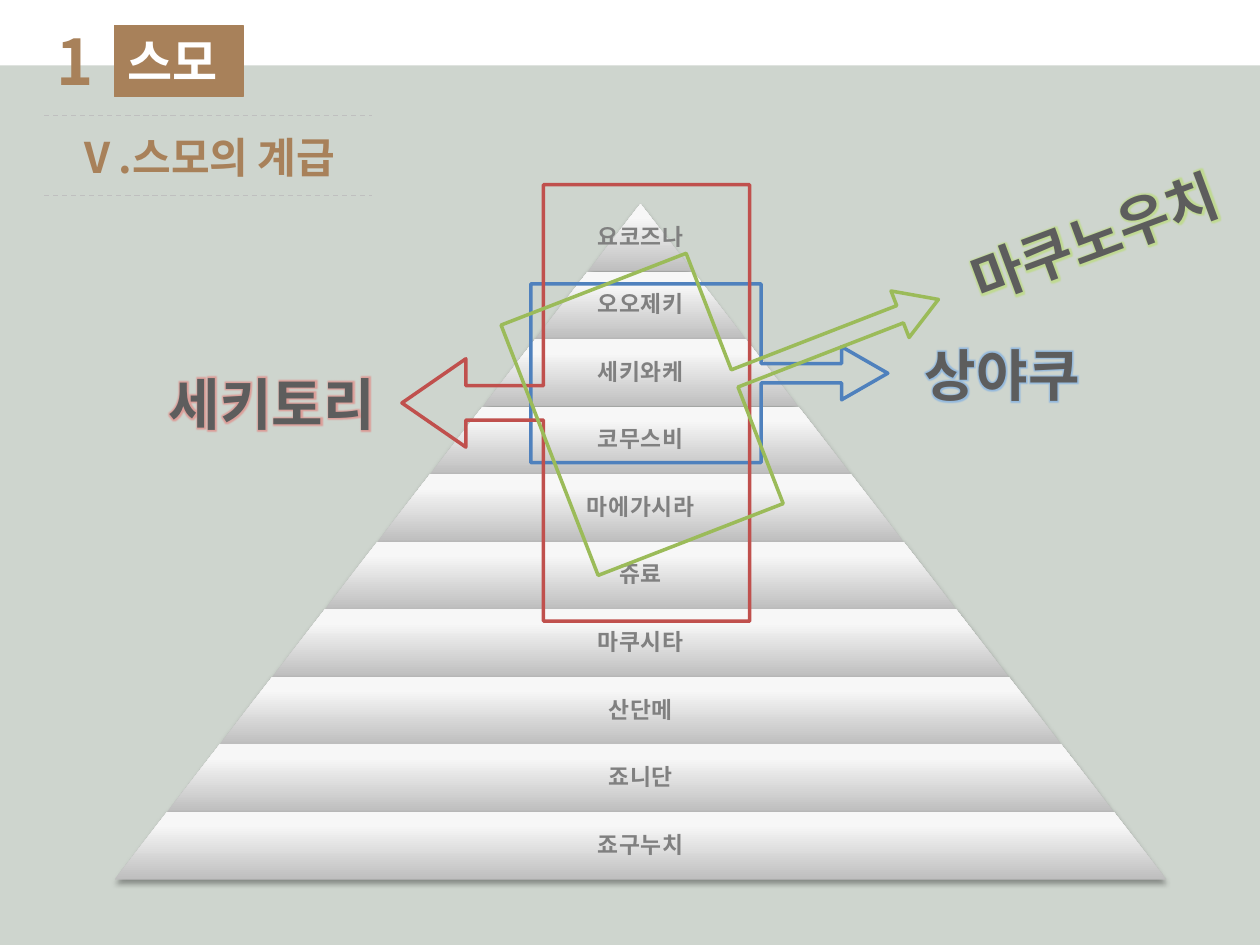
from copy import deepcopy

from lxml import etree
from pptx import Presentation
from pptx.dml.color import RGBColor
from pptx.enum import dml, shapes, text
from pptx.oxml import ns
from pptx.util import Pt

FONT = "Noto Sans CJK KR"
WHITE = RGBColor(0xFF, 0xFF, 0xFF)
SAGE = RGBColor(0xCE, 0xD5, 0xCE)
BROWN = RGBColor(0xA8, 0x81, 0x5A)
RULE = RGBColor(0xBF, 0xBF, 0xBF)
GRAY = RGBColor(0x80, 0x80, 0x80)
CHARCOAL = RGBColor(0x5D, 0x5D, 0x5D)
BLUE = RGBColor(0x4F, 0x81, 0xBD)
RED = RGBColor(0xC0, 0x50, 0x4D)
GREEN = RGBColor(0x9B, 0xBB, 0x59)
RED_GLOW = RGBColor(0xE5, 0x7A, 0x76)
BLUE_GLOW = RGBColor(0x6F, 0xA8, 0xE8)
GREEN_GLOW = RGBColor(0xB8, 0xDE, 0x6C)
BAND_STOPS = [
    (0, RGBColor(0xBE, 0xBE, 0xBE)),
    (0.8, RGBColor(0xF7, 0xF7, 0xF7)),
    (1, RGBColor(0xF8, 0xF8, 0xF8)),
]
RANKS = ["요코즈나", "오오제키", "세키와케", "코무스비", "마에가시라",
         "쥬료", "마쿠시타", "산단메", "죠니단", "죠구누치"]
CENTER, TOP, STEP, BAND_H = 366, 116.6, 60.1, 38.6
ARROWS = shapes.MSO_SHAPE
CALLOUTS = [
    dict(kind=ARROWS.RIGHT_ARROW_CALLOUT, box=(303.3, 162.2, 204, 102.2),
         adj=(0.109, 0.148, 0.258, 0.645), color=BLUE, glow=BLUE_GLOW, turn=0,
         label="상야쿠", label_box=(507.6, 190.8, 130.3, 46.1), label_turn=0),
    dict(kind=ARROWS.LEFT_ARROW_CALLOUT, box=(229.7, 105.6, 198.7, 249.4),
         adj=(0.099, 0.127, 0.184, 0.593), color=RED, glow=RED_GLOW, turn=0,
         label="세키토리", label_box=(76.3, 207.4, 158.4, 46.1), label_turn=0),
    dict(kind=ARROWS.RIGHT_ARROW_CALLOUT, box=(306, 137.5, 238.3, 153.4),
         adj=(0.069, 0.093, 0.153, 0.476), color=GREEN, glow=GREEN_GLOW, turn=338.8,
         label="마쿠노우치", label_box=(519.8, 112.3, 211.7, 46.1), label_turn=339.6),
]


def set_attrs(obj, values):
    """Set every attribute of obj named in a dict."""
    for name, value in values.items():
        setattr(obj, name, value)


def points(box):
    """Convert a box of numbers to lengths."""
    return [Pt(v) for v in box]


def write(sp, content, size, color, align=text.PP_ALIGN.LEFT,
          anchor=text.MSO_ANCHOR.TOP, spacing=1.0):
    """Fill a shape with one bold line and return its run."""
    tf = sp.text_frame
    set_attrs(tf, {"word_wrap": True, "auto_size": text.MSO_AUTO_SIZE.NONE,
                   "vertical_anchor": anchor})
    p = tf.paragraphs[0]
    set_attrs(p, {"alignment": align, "line_spacing": spacing})
    r = p.add_run()
    r.text = content
    set_attrs(r.font, {"size": Pt(size), "bold": True, "name": FONT})
    r.font.color.rgb = color
    latin = r.font._element.find(ns.qn("a:latin"))
    latin.addnext(etree.Element(ns.qn("a:ea"), typeface=FONT))
    return r


def add_effect(effects, tag, color, alpha, **attrs):
    """Append a coloured effect to an effect list."""
    effect = etree.SubElement(effects, ns.qn(tag), **attrs)
    clr = etree.SubElement(effect, ns.qn("a:srgbClr"), val=str(color))
    etree.SubElement(clr, ns.qn("a:alpha"), val=str(alpha * 1000))


def add_block(parent, box, color):
    """Add a flat rectangle."""
    sp = parent.add_shape(shapes.MSO_SHAPE.RECTANGLE, *points(box))
    sp.shadow.inherit = False
    sp.fill.solid()
    sp.fill.fore_color.rgb = color
    sp.line.fill.background()
    return sp


def add_rule(parent, y):
    """Add a dashed horizontal rule beside the heading."""
    line = parent.add_connector(shapes.MSO_CONNECTOR.STRAIGHT,
                                *points((25.2, y, 212.4, y)))
    set_attrs(line.line, {"width": Pt(0.75), "dash_style": dml.MSO_LINE.DASH})
    line.line.color.rgb = RULE
    etree.SubElement(line.element.spPr, ns.qn("a:effectLst"))


def add_band(parent, level, rank):
    """Add one pyramid band and its rank name."""
    width, y = STEP * (level + 1), TOP + BAND_H * level
    sp = parent.add_shape(shapes.MSO_SHAPE.TRAPEZOID,
                          *points((CENTER - width / 2, y, width, BAND_H)))
    sp.adjustments[0] = 0.779
    sp.line.fill.background()
    sp.fill.gradient()
    sp.fill.gradient_angle = 90
    first = sp.element.find(".//" + ns.qn("a:gs"))
    first.addnext(deepcopy(first))
    for stop, (position, color) in zip(sp.fill.gradient_stops, BAND_STOPS):
        stop.position = position
        stop.color.rgb = color
    sp.shadow.inherit = False
    add_effect(sp.element.spPr.find(ns.qn("a:effectLst")), "a:outerShdw", "000000", 35,
               blurRad=str(Pt(3.1)), dist=str(Pt(1.8)), dir="5400000", rotWithShape="0")

    text_w = max(STEP, 0.65 * width)
    tb = parent.add_textbox(*points((CENTER - text_w / 2, y, text_w, BAND_H)))
    sides = ("left", "top", "right", "bottom")
    set_attrs(tb.text_frame, {"margin_" + side: Pt(1.3) for side in sides})
    r = write(tb, rank, 13, GRAY, text.PP_ALIGN.CENTER, text.MSO_ANCHOR.MIDDLE, 0.9)
    r.font._element.set("spc", "50")


def add_callout(parent, kind, box, adj, color, glow, turn, label, label_box, label_turn):
    """Add an outlined arrow callout with its glowing label."""
    sp = parent.add_shape(kind, *points(box))
    for i, value in enumerate(adj):
        sp.adjustments[i] = value
    sp.rotation = turn
    sp.shadow.inherit = False
    sp.fill.background()
    sp.line.width = Pt(2)
    sp.line.color.rgb = color

    tb = parent.add_textbox(*points(label_box))
    tb.rotation = label_turn
    r = write(tb, label, 32, CHARCOAL, text.PP_ALIGN.CENTER)
    effects = etree.Element(ns.qn("a:effectLst"))
    add_effect(effects, "a:glow", glow, 60, rad=str(Pt(4)))
    r.font._element.find(ns.qn("a:solidFill")).addnext(effects)


def add_heading(slide):
    """Add the backdrop, section badge, number, title and rules."""
    s = slide.shapes
    backdrop = add_block(s, (0, 37.4, 720, 502.6), SAGE)
    title = s.title
    box = points((36.7, 71.3, 187.2, 36))
    set_attrs(title, dict(zip(("left", "top", "width", "height"), box)))
    write(title, "Ⅴ.스모의 계급", 24, BROWN)
    backdrop.element.addnext(title.element)
    badge = add_block(s, (65.5, 14.4, 73.4, 41), BROWN)
    badge.line.width = Pt(0.75)
    badge.line.color.rgb = BROWN
    write(badge, "스모", 28, WHITE, text.PP_ALIGN.JUSTIFY, text.MSO_ANCHOR.MIDDLE)
    number = s.add_textbox(*points((25.2, 9.4, 90.7, 51.1)))
    write(number, "1", 36, BROWN)
    for y in (111.6, 66.2):
        add_rule(s, y)


def main():
    """Build the rank pyramid slide."""
    prs = Presentation()
    set_attrs(prs, {"slide_width": Pt(720), "slide_height": Pt(540)})
    slide = prs.slides.add_slide(prs.slide_layouts[5])
    add_heading(slide)
    pyramid = slide.shapes.add_group_shape().shapes
    for level, rank in enumerate(RANKS):
        add_band(pyramid, level, rank)
    for callout in CALLOUTS:
        add_callout(slide.shapes.add_group_shape().shapes, **callout)
    prs.save("out.pptx")


if __name__ == "__main__":
    main()
